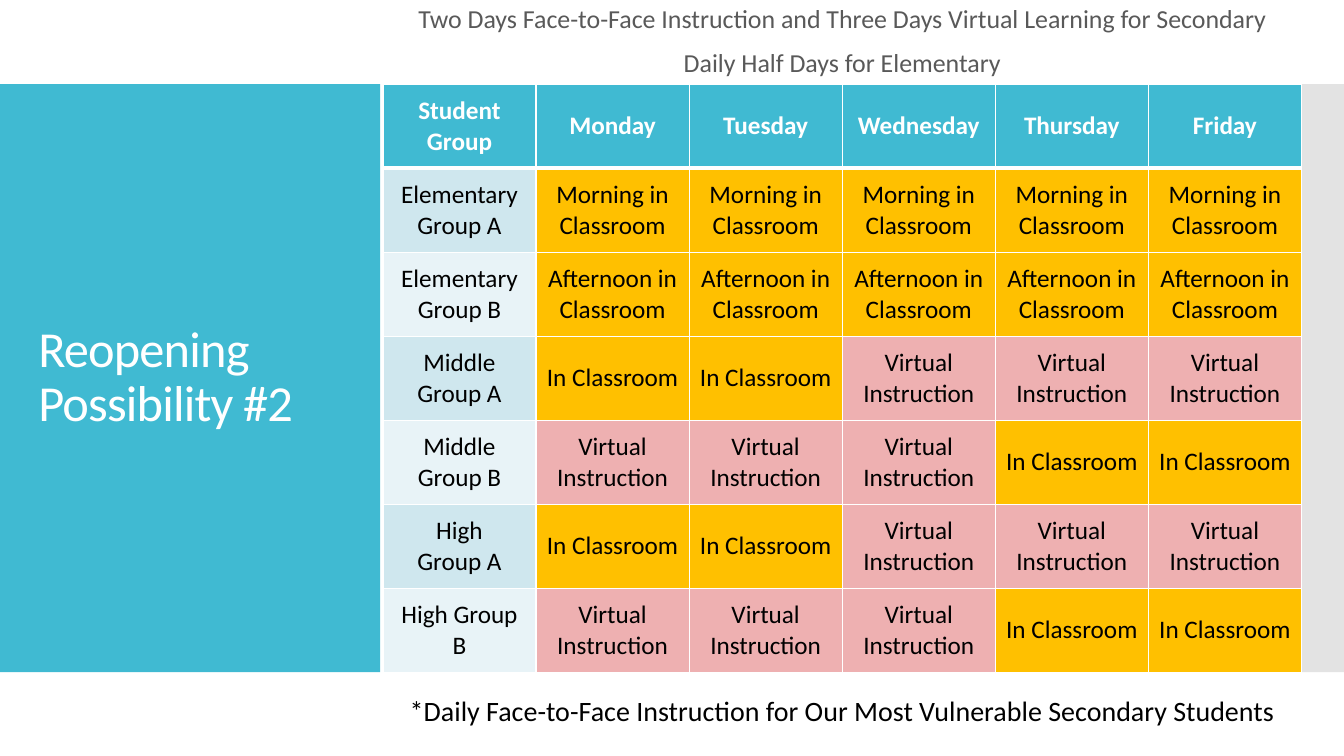
from dataclasses import dataclass

from lxml.etree import SubElement
from pptx import Presentation
from pptx.dml.color import RGBColor
from pptx.enum.shapes import MSO_SHAPE
from pptx.enum.text import MSO_ANCHOR, MSO_AUTO_SIZE, PP_ALIGN
from pptx.oxml import parse_xml
from pptx.oxml.ns import nsdecls, qn
from pptx.util import Cm, Pt


@dataclass(frozen=True)
class Theme:
    font: str = "Calibri"
    teal: str = "40BAD2"
    gray: str = "C8C8C8"
    white: str = "FFFFFF"
    black: str = "000000"
    dim: str = "595959"
    bands: tuple = ("CFE7EE", "E8F3F7")
    gold: str = "FFC000"
    pink: str = "EEB0B1"
    title: float = 36
    lead: float = 18.5
    cell: float = 18
    note: float = 20


THEME = Theme()

DAYS = ["Monday", "Tuesday", "Wednesday", "Thursday", "Friday"]
ROOM, HOME = "In Classroom", "Virtual Instruction"
EARLY = [ROOM] * 2 + [HOME] * 3
LATE = [HOME] * 3 + [ROOM] * 2
PLAN = [
    ("Elementary Group A", ["Morning in Classroom"] * 5),
    ("Elementary Group B", ["Afternoon in Classroom"] * 5),
    ("Middle\nGroup A", EARLY),
    ("Middle Group B", LATE),
    ("High\nGroup A", EARLY),
    ("High Group B", LATE),
]


def put(frame, text, size, color, bold=False, align=PP_ALIGN.CENTER,
        line=1.0, gap=0, track=0):
    """Write text into a frame, one paragraph per line."""
    frame.word_wrap = True
    frame.vertical_anchor = MSO_ANCHOR.MIDDLE
    for i, words in enumerate(text.split("\n")):
        para = frame.paragraphs[0] if i == 0 else frame.add_paragraph()
        para.alignment, para.line_spacing = align, line
        para.space_before = Pt(gap if i else 0)
        run = para.add_run()
        run.text = words
        font = run.font
        font.name, font.size, font.bold = THEME.font, Pt(size), bold
        font.color.rgb = RGBColor.from_string(color)
        if track:
            run._r.get_or_add_rPr().set("spc", str(track))


def panel(slide, box, color, alpha=None):
    rect = slide.shapes.add_shape(MSO_SHAPE.RECTANGLE, *box)
    rect.shadow.inherit = False
    rect.fill.solid()
    rect.fill.fore_color.rgb = RGBColor.from_string(color)
    rect.line.fill.background()
    if alpha:
        tint = rect._element.spPr.find(".//" + qn("a:srgbClr"))
        SubElement(tint, qn("a:alpha"), val=str(alpha * 1000))


def heading(slide, box, text):
    left, top, width, height = box
    panel(slide, box, THEME.teal)
    title = slide.shapes.title
    title.left, title.top = left + Cm(0.71), top + Cm(1)
    title.width, title.height = width - Cm(1.4), height - Cm(2)
    title.text_frame.auto_size = MSO_AUTO_SIZE.NONE
    put(title.text_frame, text, THEME.title, THEME.white,
        align=PP_ALIGN.LEFT, line=0.9, track=-60)
    slide.shapes._spTree.append(title._element)  # above the panel


def caption(slide, box, text, size, color):
    frame = slide.shapes.add_textbox(*box).text_frame
    put(frame, text, size, color, line=0.9, gap=12)


def border(cell, base):
    """Rule all four sides in white, with its own base width in points."""
    props = cell._tc.get_or_add_tcPr()
    for i, (side, width) in enumerate(zip("LRTB", (1, 1, 1, base))):
        props.insert(i, parse_xml(
            f'<a:ln{side} {nsdecls("a")} w="{Pt(width)}"><a:solidFill>'
            f'<a:srgbClr val="{THEME.white}"/></a:solidFill></a:ln{side}>'))


def fill(cell, text, back, color=THEME.black, bold=False, base=1):
    cell.fill.solid()
    cell.fill.fore_color.rgb = RGBColor.from_string(back)
    cell.vertical_anchor = MSO_ANCHOR.MIDDLE
    put(cell.text_frame, text, THEME.cell, color, bold=bold)
    border(cell, base)


def schedule(slide, box):
    left, top, width, height = box
    rows, cols = len(PLAN) + 1, len(DAYS) + 1
    table = slide.shapes.add_table(rows, cols, *box).table
    table.horz_banding = False
    for col in table.columns:
        col.width = width // cols
    for row in table.rows:
        row.height = height // rows

    # Header row
    for c, name in enumerate(["Student Group"] + DAYS):
        fill(table.cell(0, c), name, THEME.teal, THEME.white, True, 3)

    # Student groups
    for r, (group, week) in enumerate(PLAN, 1):
        fill(table.cell(r, 0), group, THEME.bands[(r - 1) % 2])
        for c, mode in enumerate(week, 1):
            back = THEME.pink if mode == HOME else THEME.gold
            fill(table.cell(r, c), mode, back)


def main():
    deck = Presentation()
    deck.slide_width, deck.slide_height = Cm(33.87), Cm(19.05)
    slide = deck.slides.add_slide(deck.slide_layouts[5])
    top, tall = Cm(2.12), Cm(14.82)
    left, wide = Cm(9.65), Cm(23.15)

    # Side panels and title
    heading(slide, (0, top, Cm(9.58), tall), "Reopening Possibility #2")
    edge = Cm(32.81)
    panel(slide, (edge, top, deck.slide_width - edge, tall), THEME.gray, 50)

    # Lead, schedule and footnote
    caption(slide, (left, 0, wide, top),
            "Two Days Face-to-Face Instruction and Three Days Virtual "
            "Learning for Secondary\nDaily Half Days for Elementary",
            THEME.lead, THEME.dim)
    schedule(slide, (left, top, wide, tall))
    caption(slide, (left, Cm(16.9), wide, top),
            "*Daily Face-to-Face Instruction for Our Most Vulnerable "
            "Secondary Students", THEME.note, THEME.black)
    deck.save("out.pptx")


if __name__ == "__main__":
    main()
